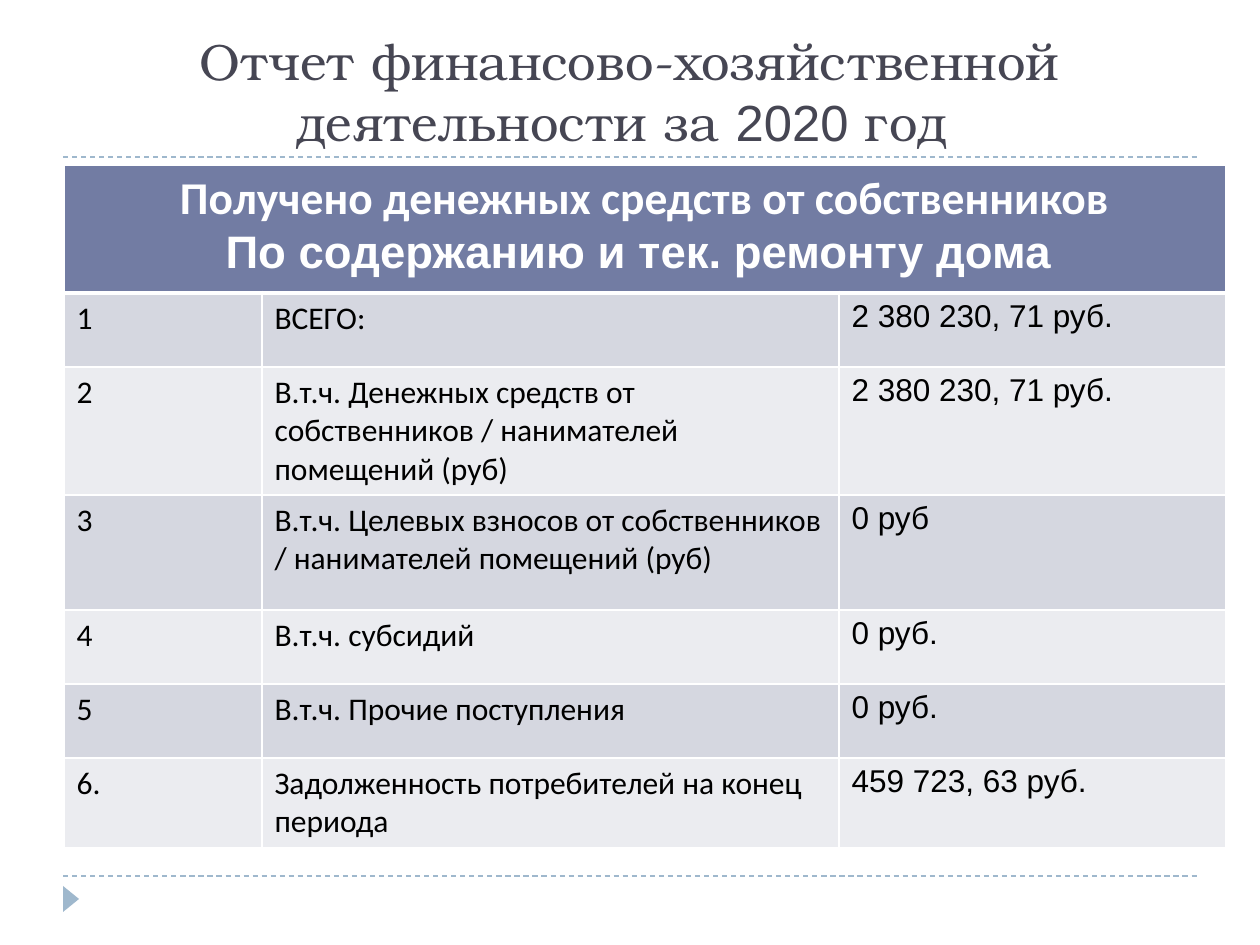
from dataclasses import dataclass

import lxml.etree
import pptx
import pptx.dml.color
import pptx.enum.dml
import pptx.enum.shapes
import pptx.enum.text
import pptx.oxml.ns
import pptx.util

RGBColor = pptx.dml.color.RGBColor
WHITE = RGBColor(0xFF, 0xFF, 0xFF)
BLACK = RGBColor(0x00, 0x00, 0x00)
TITLE_COLOR = RGBColor(0x46, 0x46, 0x53)
ACCENT = RGBColor(0x9F, 0xB8, 0xCD)
HEADER_FILL = RGBColor(0x72, 0x7C, 0xA3)
BAND_FILLS = (RGBColor(0xD5, 0xD7, 0xE0), RGBColor(0xEB, 0xEC, 0xF0))

EMU_PER_PX = 914400 / 126
COLUMN_WIDTHS = (198, 577, 387)
COLUMN_FONTS = ("Calibri", "Calibri", "Arial")
HEADER_HEIGHT = 128
CENTER = pptx.enum.text.PP_ALIGN.CENTER


@dataclass(frozen=True)
class ReportRow:
    number: str
    label: str
    amount: str
    height: int


@dataclass(frozen=True)
class TextPart:
    text: str
    font: str


TITLE_PARTS = (
    TextPart("Отчет финансово-хозяйственной деятельности за ", "TeX Gyre Bonum"),
    TextPart("2020", "Arial"),
    TextPart(" год ", "TeX Gyre Bonum"),
)
HEADER_PARTS = (
    TextPart("Получено денежных средств от собственников", "Calibri"),
    TextPart("По содержанию и тек. ремонту дома ", "Arial"),
)
ROWS = (
    ReportRow("1", "ВСЕГО:", "2 380 230, 71 руб.", 74),
    ReportRow("2", "В.т.ч. Денежных средств от собственников / нанимателей помещений (руб)",
              "2 380 230, 71 руб.", 115),
    ReportRow("3", "В.т.ч. Целевых взносов от собственников / нанимателей помещений (руб)",
              "0 руб", 115),
    ReportRow("4", "В.т.ч. субсидий", "0 руб.", 74),
    ReportRow("5", "В.т.ч. Прочие поступления", "0 руб.", 74),
    ReportRow("6.", "Задолженность потребителей на конец периода", "459 723, 63 руб.", 81),
)


def px(length: int) -> pptx.util.Emu:
    return pptx.util.Emu(round(length * EMU_PER_PX))


def add_divider(slide, y: int) -> None:
    connector = slide.shapes.add_connector(
        pptx.enum.shapes.MSO_CONNECTOR.STRAIGHT, px(63), px(y), px(1197), px(y))
    connector.line.color.rgb = ACCENT
    connector.line.width = pptx.util.Pt(0.75)
    connector.line.dash_style = pptx.enum.dml.MSO_LINE.DASH
    lxml.etree.SubElement(connector._element.spPr, pptx.oxml.ns.qn("a:effectLst"))


def add_marker(slide) -> None:
    marker = slide.shapes.add_shape(
        pptx.enum.shapes.MSO_SHAPE.ISOSCELES_TRIANGLE, px(58), px(891), px(26), px(16))
    marker.rotation = 90
    marker.shadow.inherit = False
    marker.fill.solid()
    marker.fill.fore_color.rgb = ACCENT
    marker.line.fill.background()


def fill_title(title) -> None:
    title.left, title.top, title.width, title.height = px(63), px(32), px(1134), px(126)
    frame = title.text_frame
    frame.word_wrap = True
    frame.auto_size = pptx.enum.text.MSO_AUTO_SIZE.NONE
    frame.vertical_anchor = pptx.enum.text.MSO_ANCHOR.BOTTOM
    paragraph = frame.paragraphs[0]
    paragraph.alignment = CENTER
    paragraph.font.size = pptx.util.Pt(29)
    paragraph.font.color.rgb = TITLE_COLOR
    for part in TITLE_PARTS:
        run = paragraph.add_run()
        run.text = part.text
        run.font.name = part.font


def style_cell(cell, fill: RGBColor, top: int = 1, bottom: int = 1) -> None:
    properties = cell._tc.get_or_add_tcPr()
    for side, points in (("L", 1), ("R", 1), ("T", top), ("B", bottom)):
        border = lxml.etree.SubElement(
            properties, pptx.oxml.ns.qn(f"a:ln{side}"), w=str(pptx.util.Pt(points)))
        solid = lxml.etree.SubElement(border, pptx.oxml.ns.qn("a:solidFill"))
        lxml.etree.SubElement(solid, pptx.oxml.ns.qn("a:srgbClr"), val=str(WHITE))
    cell.fill.solid()
    cell.fill.fore_color.rgb = fill


def write_paragraph(paragraph, text: str, font: str, size: int, color: RGBColor,
                    bold: bool) -> None:
    paragraph.text = text
    paragraph.font.name = font
    paragraph.font.size = pptx.util.Pt(size)
    paragraph.font.color.rgb = color
    paragraph.font.bold = bold


def add_report_table(slide) -> None:
    heights = [HEADER_HEIGHT] + [row.height for row in ROWS]
    table = slide.shapes.add_table(
        len(heights), len(COLUMN_WIDTHS), px(64), px(165),
        px(sum(COLUMN_WIDTHS)), px(sum(heights))).table
    for column, width in zip(table.columns, COLUMN_WIDTHS):
        column.width = px(width)
    for table_row, height in zip(table.rows, heights):
        table_row.height = px(height)

    header = table.cell(0, 0)
    header.merge(table.cell(0, len(COLUMN_WIDTHS) - 1))
    for cell in table.rows[0].cells:
        style_cell(cell, HEADER_FILL, bottom=3)
    header.text = "\n".join(part.text for part in HEADER_PARTS)
    for paragraph, part in zip(header.text_frame.paragraphs, HEADER_PARTS):
        write_paragraph(paragraph, part.text, part.font, 26, WHITE, True)
        paragraph.alignment = CENTER

    for index, row in enumerate(ROWS):
        texts = (row.number, row.label, row.amount)
        for cell, text, font in zip(table.rows[index + 1].cells, texts, COLUMN_FONTS):
            style_cell(cell, BAND_FILLS[index % 2], top=1 if index else 3)
            write_paragraph(cell.text_frame.paragraphs[0], text, font, 18, BLACK, False)


def main() -> None:
    presentation = pptx.Presentation()
    presentation.slide_width, presentation.slide_height = px(1260), px(945)
    slide = presentation.slides.add_slide(presentation.slide_layouts[5])
    for y in (876, 157):
        add_divider(slide, y)
    add_marker(slide)
    fill_title(slide.shapes.title)
    add_report_table(slide)
    presentation.save("out.pptx")


if __name__ == "__main__":
    main()
